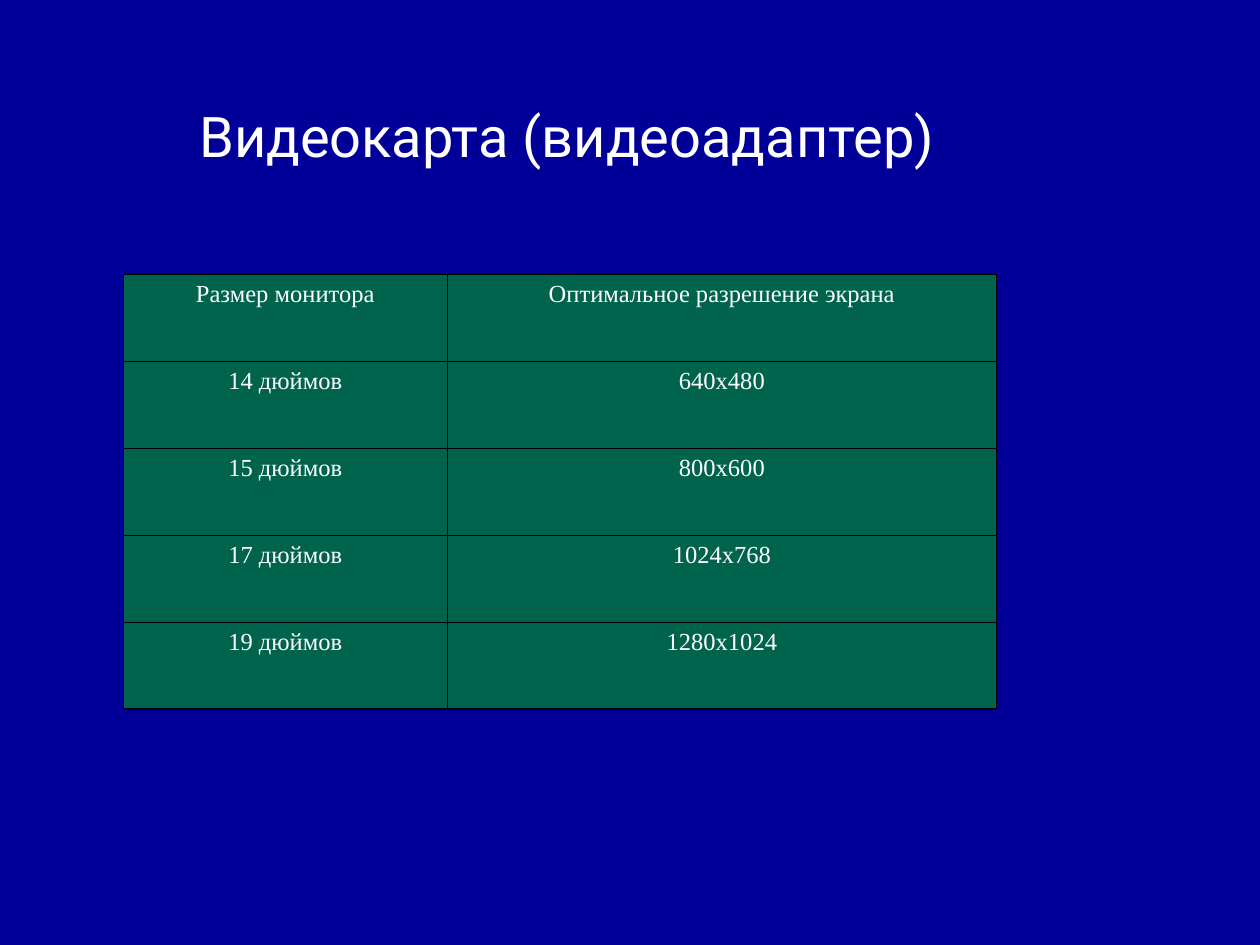
from dataclasses import dataclass

from lxml import etree
from pptx import Presentation
from pptx import util as u
from pptx.dml.color import RGBColor
from pptx.enum import text
from pptx.oxml import ns


@dataclass(frozen=True)
class Theme:
    background: str = "000099"
    font_color: str = "FFFFFF"
    cell_fill: str = "00C600"
    cell_opacity: int = 50
    border: str = "000000"
    border_width: float = 1
    title_font: str = "Roboto"
    title_size: int = 32
    table_font: str = "Times New Roman"
    table_size: int = 14


class SlideBuilder:
    def __init__(self, slide, theme):
        self.slide = slide
        self.theme = theme
        fill = slide.background.fill
        fill.solid()
        fill.fore_color.rgb = RGBColor.from_string(theme.background)

    def set_text(self, frame, wording, font_name, size):
        frame.text = wording
        paragraph = frame.paragraphs[0]
        paragraph.alignment = text.PP_ALIGN.CENTER
        for run in paragraph.runs:
            run.font.name = font_name
            run.font.size = u.Pt(size)
            run.font.color.rgb = RGBColor.from_string(self.theme.font_color)

    def title(self, wording, left, top, width, height):
        shape = self.slide.shapes.title
        shape.left, shape.top = u.Inches(left), u.Inches(top)
        shape.width, shape.height = u.Inches(width), u.Inches(height)
        shape.text_frame.vertical_anchor = text.MSO_ANCHOR.MIDDLE
        self.set_text(shape.text_frame, wording, self.theme.title_font, self.theme.title_size)

    def table(self, rows, left, top, column_widths, row_height):
        frame = self.slide.shapes.add_table(
            len(rows), len(column_widths), u.Inches(left), u.Inches(top),
            u.Inches(sum(column_widths)), u.Inches(row_height * len(rows)))
        table = frame.table
        table.first_row = table.horz_banding = False
        for column, width in zip(table.columns, column_widths):
            column.width = u.Inches(width)
        for row, wordings in zip(table.rows, rows):
            row.height = u.Inches(row_height)
            for cell, wording in zip(row.cells, wordings):
                self.set_text(cell.text_frame, wording, self.theme.table_font, self.theme.table_size)
                self.style_cell(cell)

    def style_cell(self, cell):
        # Borders come before the fill in the cell properties
        properties = cell._tc.get_or_add_tcPr()
        for side in ("a:lnL", "a:lnR", "a:lnT", "a:lnB"):
            line = etree.SubElement(properties, ns.qn(side), w=str(u.Pt(self.theme.border_width)))
            solid = etree.SubElement(line, ns.qn("a:solidFill"))
            etree.SubElement(solid, ns.qn("a:srgbClr"), val=self.theme.border)
        cell.fill.solid()
        cell.fill.fore_color.rgb = RGBColor.from_string(self.theme.cell_fill)
        color = properties.find(ns.qn("a:solidFill")).find(ns.qn("a:srgbClr"))
        etree.SubElement(color, ns.qn("a:alpha"), val=str(self.theme.cell_opacity * 1000))


def main():
    presentation = Presentation()
    presentation.slide_width, presentation.slide_height = u.Inches(10), u.Inches(7.5)
    title_only = presentation.slide_layouts[5]
    builder = SlideBuilder(presentation.slides.add_slide(title_only), Theme())

    # Heading
    builder.title("Видеокарта (видеоадаптер)", 0, 0.32, 9, 1.51)

    # Monitor sizes and resolutions
    resolutions = [
        ("Размер монитора", "Оптимальное разрешение экрана"),
        ("14 дюймов", "640х480"),
        ("15 дюймов", "800х600"),
        ("17 дюймов", "1024х768"),
        ("19 дюймов", "1280х1024"),
    ]
    builder.table(resolutions, left=0.98, top=2.18, column_widths=(2.57, 4.36), row_height=0.69)

    presentation.save("out.pptx")


if __name__ == "__main__":
    main()
